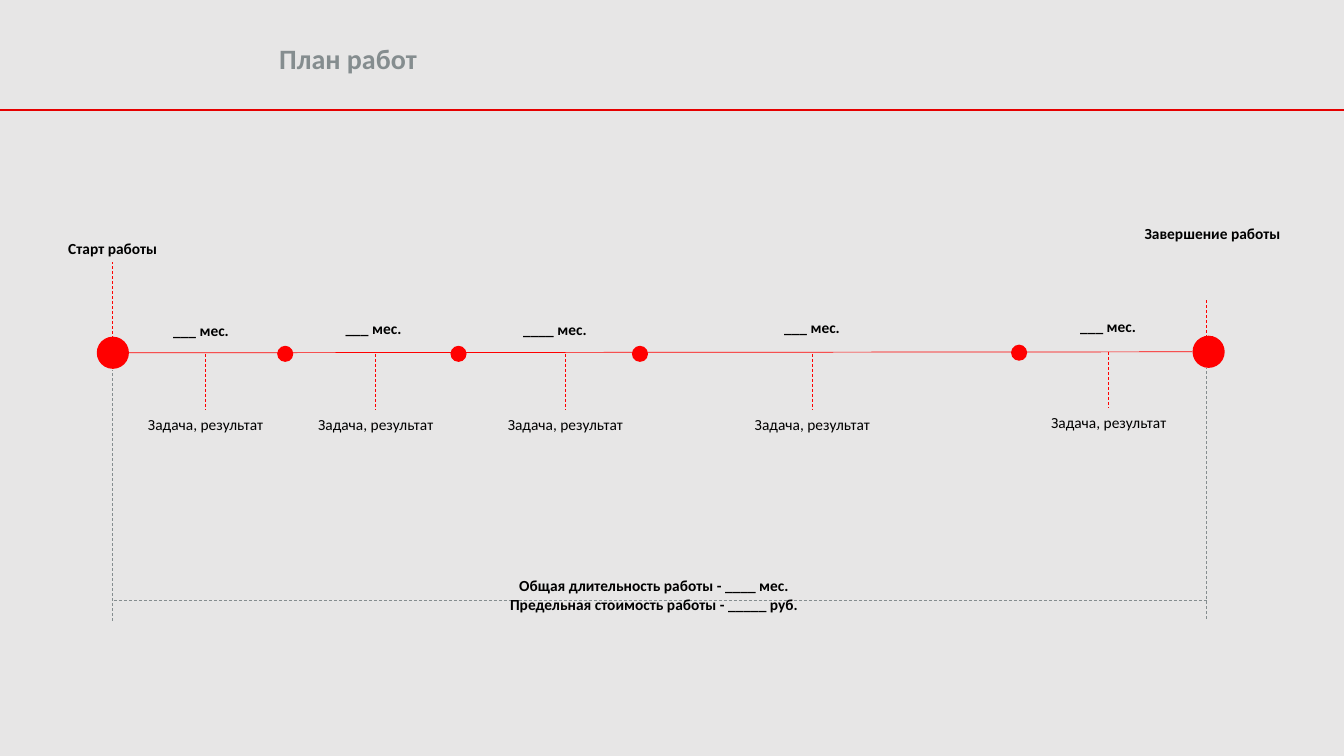
"""Builds the work plan slide with a timeline of five stages."""
from pptx import Presentation
from pptx.dml.color import RGBColor
from pptx.enum.dml import MSO_LINE_DASH_STYLE as Dash
from pptx.enum.shapes import MSO_CONNECTOR as Conn, MSO_SHAPE as Form
from pptx.enum.text import MSO_ANCHOR as Anchor, MSO_AUTO_SIZE as Fit, PP_ALIGN as Align
from pptx.util import Pt
from lxml.etree import SubElement

RED, GREY, BLACK = "FF0000", "858D8F", "000000"
NS = "{http://schemas.openxmlformats.org/drawingml/2006/main}"

deck = Presentation()
deck.slide_width, deck.slide_height = Pt(960), Pt(540)
slide = deck.slides.add_slide(deck.slide_layouts[5])
fill = slide.background.fill
fill.solid()
fill.fore_color.rgb = RGBColor.from_string("E7E6E6")


def write(shape, lines, size=11, bold=True, color=BLACK, align=Align.CENTER):
    frame = shape.text_frame
    frame.text = "\n".join(lines)
    look = {"word_wrap": True, "auto_size": Fit.NONE, "vertical_anchor": Anchor.TOP}
    for key, val in look.items():
        setattr(frame, key, val)
    for para in frame.paragraphs:
        para.alignment = align
        font = para.runs[0].font
        for key, val in {"name": "Calibri", "size": Pt(size), "bold": bold}.items():
            setattr(font, key, val)
        font.color.rgb = RGBColor.from_string(color)


def rule(x1, y1, x2, y2, color=RED, width=0.5, dash=Dash.DASH):
    line = slide.shapes.add_connector(Conn.STRAIGHT, Pt(x1), Pt(y1), Pt(x2), Pt(y2))
    line.line.color.rgb = RGBColor.from_string(color)
    line.line.width = Pt(width)
    if dash:
        line.line.dash_style = dash
    SubElement(line._element.spPr, NS + "effectLst")


title = slide.shapes.title
for key, val in {"left": 192.2, "top": 26, "width": 619.2, "height": 31.7}.items():
    setattr(title, key, Pt(val))
write(title, ["План работ"], 20, color=GREY, align=Align.LEFT)
rule(0, 78.5, 960, 78.5, "E60000", 1.25, None)

rule(92.2, 252, 851.8, 251.3, dash=None)
dots = [(69.1, 240.5, 23), (851.8, 239.8, 23), (198, 247, 11.5),
        (321.8, 247, 11.5), (451.4, 247, 11.5), (722.2, 246.2, 11.5)]
for x, y, size in dots:
    dot = slide.shapes.add_shape(Form.OVAL, Pt(x), Pt(y), Pt(size), Pt(size))
    dot.shadow.inherit = False
    dot.fill.solid()
    dot.fill.fore_color.rgb = RGBColor.from_string(RED)
    dot.line.fill.background()

rule(80.6, 263.5, 80.6, 187.2)
rule(861.8, 214.6, 861.8, 242.6)
rule(80.6, 443.5, 80.6, 264.2, GREY)
rule(861.8, 442.1, 861.8, 262.8, GREY)
rule(81.4, 429.1, 863.3, 429.1, GREY)

task = ["Задача, результат"]
notes = [
    (19.4, 167, 122.4, 20.9, ["Старт работы"], True),
    (779.8, 156.2, 172.8, 20.9, ["Завершение работы"], True),
    (330.5, 408.2, 273.6, 33.8, ["Общая длительность работы - ____ мес.",
                                 "Предельная стоимость работы - _____ руб."], True),
]
stages = [
    (146.9, 113.8, 293, 105.8, 226.1, "___ мес."),
    (268.4, 124.6, 293, 229, 224.6, "___ мес."),
    (403.9, 146.9, 293, 358.6, 225.4, "____ мес."),
    (580.3, 131, 293, 542.2, 223.9, "___ мес."),
    (792, 146.9, 291.6, 753.8, 223.2, "___ мес."),
]
for mid, wide, top, left, high, term in stages:
    rule(mid, top - 40.3, mid, top)
    notes += [(mid - wide / 2, top, wide, 20.9, task, False),
              (left, high, 75.6, 20.9, [term], True)]

for x, y, wide, tall, lines, bold in notes:
    box = slide.shapes.add_textbox(Pt(x), Pt(y), Pt(wide), Pt(tall))
    write(box, lines, bold=bold)

deck.save("out.pptx")
